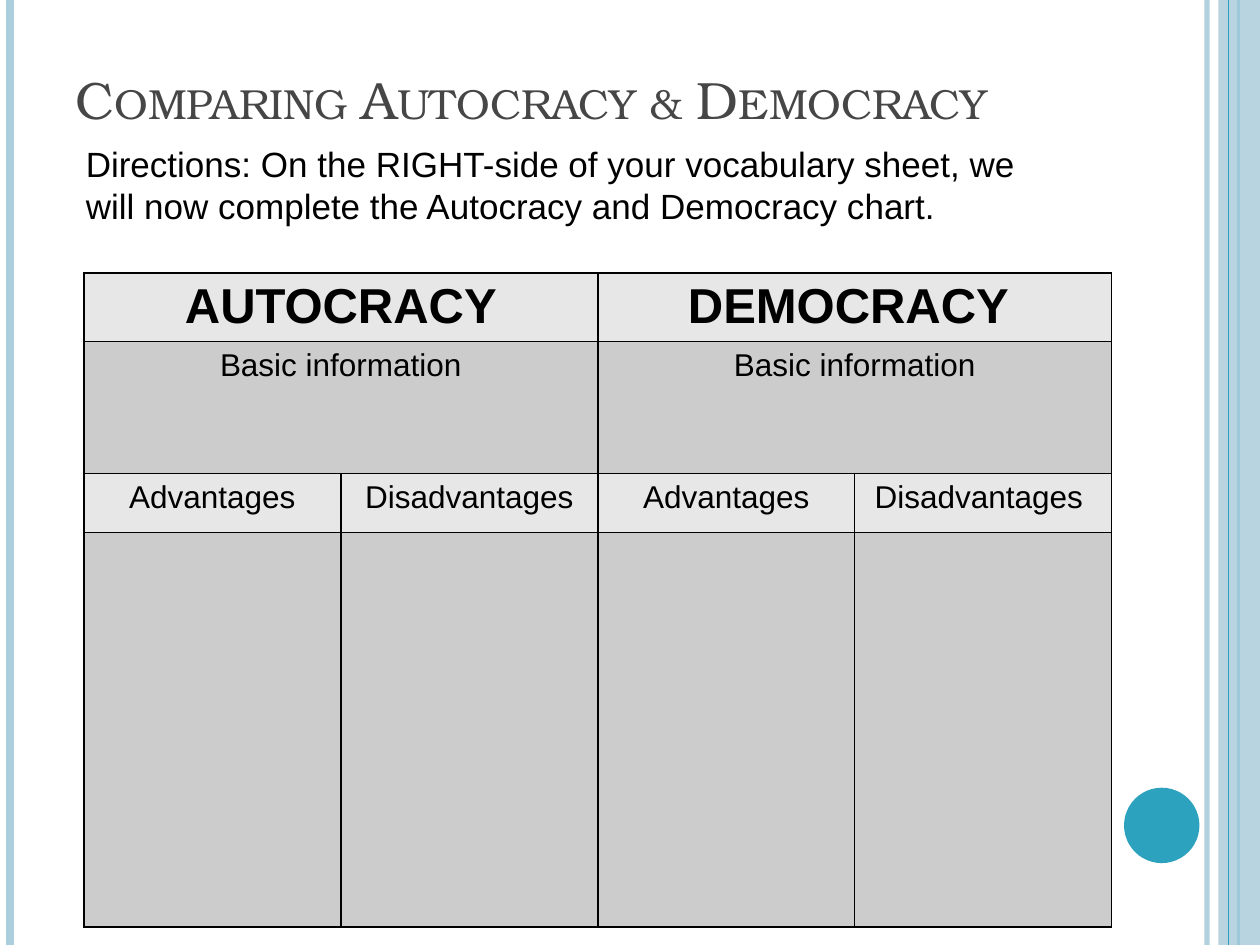
"""Build the slide that compares autocracy and democracy in a chart to fill in."""
from lxml.etree import SubElement
from pptx import Presentation
from pptx.dml.color import RGBColor
from pptx.enum.shapes import MSO_CONNECTOR, MSO_SHAPE
from pptx.enum.text import MSO_ANCHOR, MSO_AUTO_SIZE, PP_ALIGN
from pptx.oxml.ns import qn
from pptx.util import Cm, Pt

COLORS = {"teal": "2DA2BF", "pale": "ADCEDC", "title": "464646",
          "text": "000000", "light": "E7E7E7", "dark": "CCCCCC"}
TITLE = "Comparing Autocracy & Democracy"
DIRECTIONS = ("Directions: On the RIGHT-side of your vocabulary sheet, we will now "
              "complete the Autocracy and Democracy chart.")
ROWS = [
    {"labels": ["AUTOCRACY", "DEMOCRACY "], "height": 1.39, "fill": "light",
     "size": 28, "bold": True},
    {"labels": ["Basic information"] * 2, "height": 2.66, "fill": "dark"},
    {"labels": ["Advantages", "Disadvantages", "Advantages", "Disadvantages "],
     "height": 1.19, "fill": "light"},
    {"labels": [""] * 4, "height": 7.95, "fill": "dark"},
]
COLUMNS, COLUMN_WIDTH = 4, 5.18
SLIDE_WIDTH, SLIDE_HEIGHT = 25.4, 19.05
RULES_BEHIND = [(24.33, "pale", 3, 93), (0.2, "pale", 4.5, 100), (24.97, "teal", 1.5, 100)]
RULES_FRONT = [(24.77, "teal", 0.75, 100)]
BAND_LEFT = 24.56


def rgb(name):
    return RGBColor.from_string(COLORS[name])


def set_opacity(part, percent):
    if percent < 100:
        for color in part._element.iter(qn("a:srgbClr")):
            SubElement(color, qn("a:alpha"), val=str(percent * 1000))


def write_text(frame, text, size=18, font="Arial", color="text", bold=False,
               align=PP_ALIGN.LEFT, small_caps=False):
    paragraph = frame.paragraphs[0]
    paragraph.alignment = align
    run = paragraph.add_run()
    run.text = text
    run.font.size, run.font.name, run.font.bold = Pt(size), font, bold
    run.font.color.rgb = rgb(color)
    if small_caps:
        run.font._element.set("cap", "small")


def draw_rules(shapes, rules):
    for x, color, weight, opacity in rules:
        rule = shapes.add_connector(MSO_CONNECTOR.STRAIGHT, Cm(x), Cm(0), Cm(x), Cm(SLIDE_HEIGHT))
        rule.line.color.rgb, rule.line.width = rgb(color), Pt(weight)
        set_opacity(rule, opacity)
        SubElement(rule._element.spPr, qn("a:effectLst"))


def draw_shape(shapes, kind, left, top, width, height, color, opacity=100):
    shape = shapes.add_shape(kind, Cm(left), Cm(top), Cm(width), Cm(height))
    shape.shadow.inherit = False
    shape.fill.solid()
    shape.fill.fore_color.rgb = rgb(color)
    shape.line.fill.background()
    set_opacity(shape, opacity)


def style_cell(cell, fill):
    properties = cell._tc.get_or_add_tcPr()
    for side in ("lnL", "lnR", "lnT", "lnB"):
        border = SubElement(properties, qn(f"a:{side}"), w=str(Pt(1)))
        SubElement(SubElement(border, qn("a:solidFill")), qn("a:srgbClr"), val=COLORS["text"])
    cell.fill.solid()
    cell.fill.fore_color.rgb = rgb(fill)


def draw_chart_table(shapes):
    total = sum(row["height"] for row in ROWS)
    table = shapes.add_table(len(ROWS), COLUMNS, Cm(1.69), Cm(5.5),
                             Cm(COLUMNS * COLUMN_WIDTH), Cm(total)).table
    for column in table.columns:
        column.width = Cm(COLUMN_WIDTH)
    for r, row in enumerate(ROWS):
        table.rows[r].height = Cm(row["height"])
        for c in range(COLUMNS):
            style_cell(table.cell(r, c), row["fill"])
        span = COLUMNS // len(row["labels"])
        for i, label in enumerate(row["labels"]):
            cell = table.cell(r, i * span)
            if span > 1:
                cell.merge(table.cell(r, i * span + span - 1))
            if label:
                write_text(cell.text_frame, label, size=row.get("size", 18),
                           bold=row.get("bold", False), align=PP_ALIGN.CENTER)


def main():
    deck = Presentation()
    deck.slide_width, deck.slide_height = Cm(SLIDE_WIDTH), Cm(SLIDE_HEIGHT)
    shapes = deck.slides.add_slide(deck.slide_layouts[5]).shapes

    draw_rules(shapes, RULES_BEHIND)
    draw_shape(shapes, MSO_SHAPE.RECTANGLE, BAND_LEFT, 0, SLIDE_WIDTH - BAND_LEFT,
               SLIDE_HEIGHT, "pale", 87)
    draw_rules(shapes, RULES_FRONT)
    draw_shape(shapes, MSO_SHAPE.OVAL, 22.66, 15.88, 1.52, 1.52, "teal")

    title = shapes.title
    title.left, title.top, title.width, title.height = Cm(1.27), Cm(0.76), Cm(20.75), Cm(1.98)
    title.text_frame.vertical_anchor = MSO_ANCHOR.BOTTOM
    title.text_frame.auto_size = MSO_AUTO_SIZE.NONE
    write_text(title.text_frame, TITLE, size=30, font="TeX Gyre Bonum", color="title",
               small_caps=True)

    draw_chart_table(shapes)

    directions = shapes.add_textbox(Cm(1.48), Cm(2.75), Cm(20.32), Cm(1.96)).text_frame
    directions.word_wrap = True
    directions.auto_size = MSO_AUTO_SIZE.SHAPE_TO_FIT_TEXT
    write_text(directions, DIRECTIONS, size=20)

    deck.save("out.pptx")


if __name__ == "__main__":
    main()
